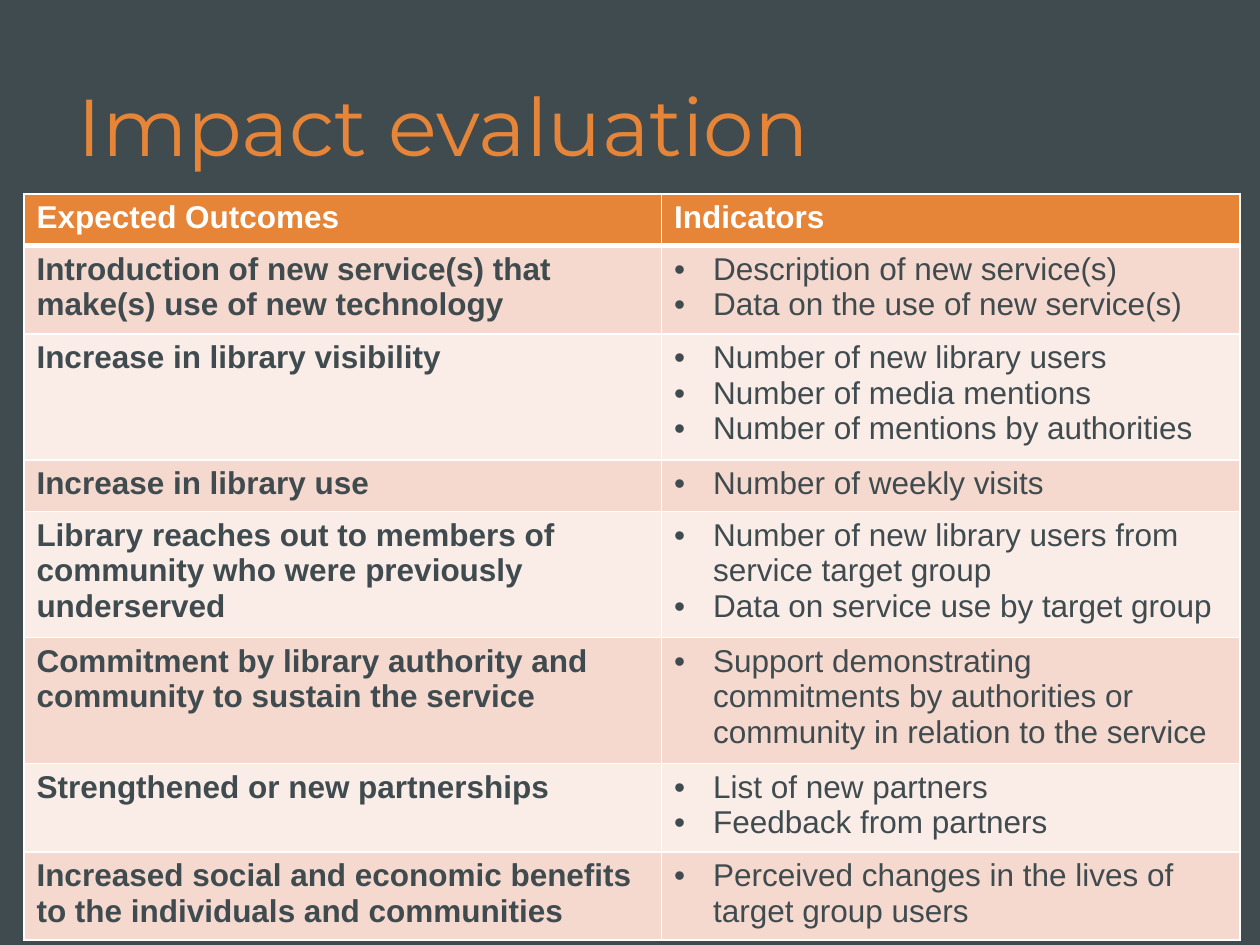
from dataclasses import dataclass

from lxml import etree
from pptx import Presentation
from pptx.dml.color import RGBColor
from pptx.enum.text import MSO_ANCHOR
from pptx.oxml.ns import qn
from pptx.util import Emu, Inches, Pt

MIDDLE = MSO_ANCHOR.MIDDLE

SLATE = RGBColor(0x3F, 0x4B, 0x4F)
ORANGE = RGBColor(0xE6, 0x85, 0x38)
PEACH = RGBColor(0xF5, 0xD9, 0xCE)
PALE = RGBColor(0xFA, 0xED, 0xE8)
WHITE = RGBColor(0xFF, 0xFF, 0xFF)

COLUMNS = (5.06, 4.59)
MIN_ROW_HEIGHT = 0.41
LINE_HEIGHT = 0.28
CELL_MARGINS = 0.11
BULLET_INDENT = Inches(0.31)
THIN, THICK = Pt(1), Pt(3)


@dataclass(frozen=True)
class Outcome:
    name: str
    lines: int
    indicators: tuple[str, ...]

    def height(self) -> float:
        return max(MIN_ROW_HEIGHT, CELL_MARGINS + LINE_HEIGHT * self.lines)


HEADINGS = ("Expected Outcomes", "Indicators")
OUTCOMES = (
    Outcome("Introduction of new service(s) that make(s) use of new technology", 2,
            ("Description of new service(s)",
             "Data on the use of new service(s)")),
    Outcome("Increase in library visibility", 3,
            ("Number of new library users",
             "Number of media mentions",
             "Number of mentions by authorities")),
    Outcome("Increase in library use", 1, ("Number of weekly visits",)),
    Outcome("Library reaches out to members of community who were previously underserved", 3,
            ("Number of new library users from service target group",
             "Data on service use by target group")),
    Outcome("Commitment by library authority and community to sustain the service", 3,
            ("Support demonstrating commitments by authorities or community "
             "in relation to the service",)),
    Outcome("Strengthened or new partnerships", 2,
            ("List of new partners", "Feedback from partners")),
    Outcome("Increased social and economic benefits to the individuals and communities", 2,
            ("Perceived changes in the lives of target group users",)),
)


def add_bullet(p) -> None:
    pPr = p._p.get_or_add_pPr()
    pPr.set("marL", str(BULLET_INDENT))
    pPr.set("indent", str(-BULLET_INDENT))
    etree.SubElement(pPr, qn("a:buFont"), typeface="Arial")
    etree.SubElement(pPr, qn("a:buChar"), char="•")


def write(tf, *lines: str, font: str = "Arial", size: float = 18,
          color: RGBColor = SLATE, bold: bool = False, bullet: bool = False) -> None:
    """Fill a text frame with one paragraph per line."""
    tf.word_wrap = True
    for i, line in enumerate(lines):
        p = tf.add_paragraph() if i else tf.paragraphs[0]
        if bullet:
            add_bullet(p)
        r = p.add_run()
        r.text = line
        r.font.name = font
        r.font.size = Pt(size)
        r.font.bold = bold
        r.font.color.rgb = color


def style_cell(cell, fill: RGBColor, top: Emu = THIN, bottom: Emu = THIN) -> None:
    """Set the fill and white borders of a cell."""
    tcPr = cell._tc.get_or_add_tcPr()
    for side, width in (("L", THIN), ("R", THIN), ("T", top), ("B", bottom)):
        ln = etree.SubElement(tcPr, qn(f"a:ln{side}"), w=str(width))
        solid = etree.SubElement(ln, qn("a:solidFill"))
        etree.SubElement(solid, qn("a:srgbClr"), val=str(WHITE))
    cell.fill.solid()
    cell.fill.fore_color.rgb = fill


def add_title(s, text: str) -> None:
    box = s.shapes.add_textbox(Inches(0.52), Inches(0.41), Inches(9), Inches(1.16))
    box.text_frame.vertical_anchor = MIDDLE
    write(box.text_frame, text, font="Montserrat", size=46, color=ORANGE)


def add_outcome_table(s) -> None:
    heights = [MIN_ROW_HEIGHT] + [outcome.height() for outcome in OUTCOMES]
    table = s.shapes.add_table(len(heights), len(COLUMNS), Inches(0.19), Inches(1.54),
                               Inches(sum(COLUMNS)), Inches(sum(heights))).table
    for column, width in zip(table.columns, COLUMNS):
        column.width = Inches(width)
    for row, height in zip(table.rows, heights):
        row.height = Inches(height)

    for col, heading in enumerate(HEADINGS):
        cell = table.cell(0, col)
        style_cell(cell, ORANGE, bottom=THICK)
        write(cell.text_frame, heading, color=WHITE, bold=True)

    for row, outcome in enumerate(OUTCOMES, start=1):
        name, indicators = table.cell(row, 0), table.cell(row, 1)
        for cell in (name, indicators):
            style_cell(cell, PEACH if row % 2 else PALE, top=THICK if row == 1 else THIN)
        write(name.text_frame, outcome.name, bold=True)
        write(indicators.text_frame, *outcome.indicators, bullet=True)


def main() -> None:
    prs = Presentation()
    prs.slide_width, prs.slide_height = Inches(10), Inches(7.5)
    s = prs.slides.add_slide(prs.slide_layouts[6])
    s.background.fill.solid()
    s.background.fill.fore_color.rgb = SLATE
    add_title(s, "Impact evaluation")
    add_outcome_table(s)
    prs.save("out.pptx")


if __name__ == "__main__":
    main()
